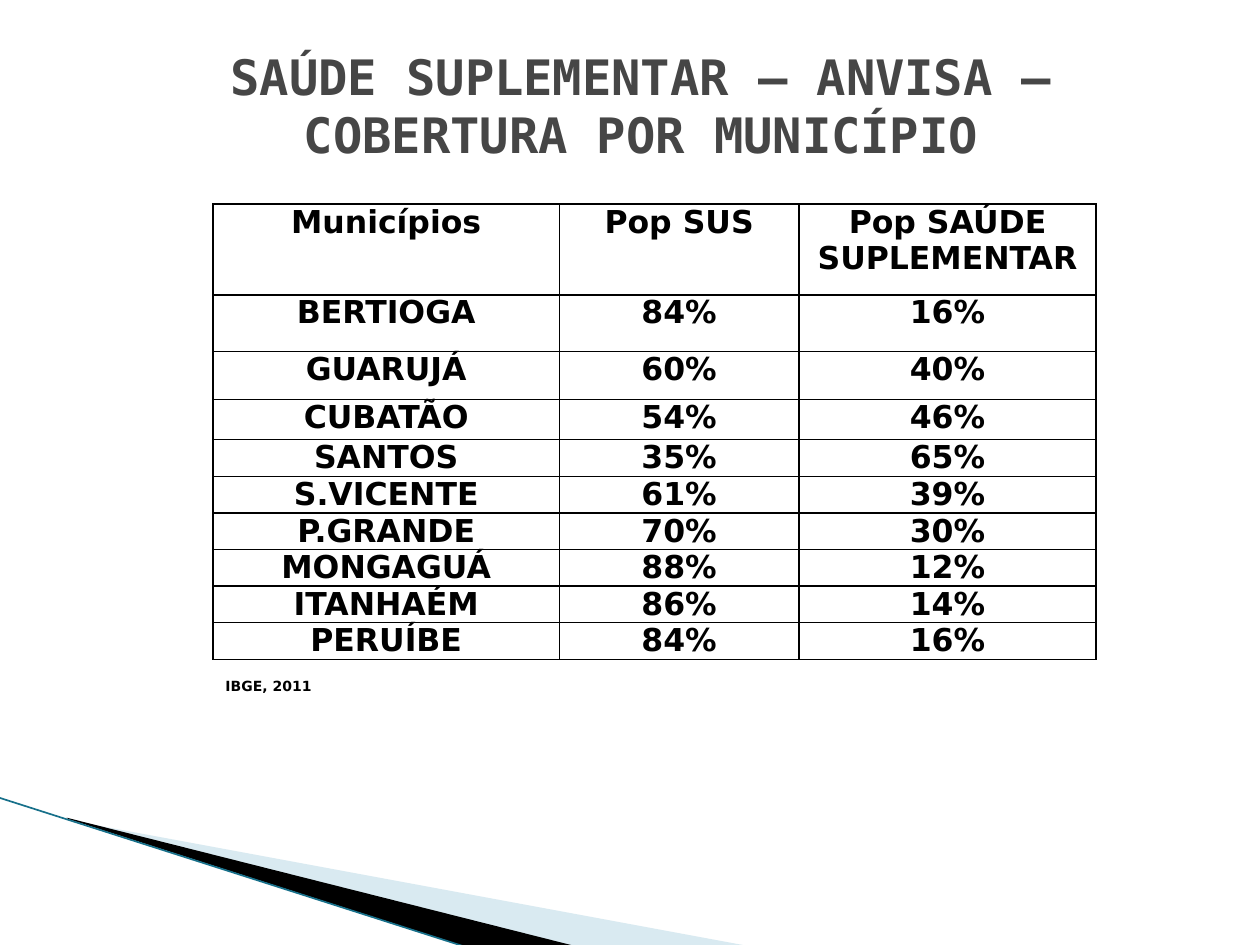
from lxml import etree
from pptx import Presentation
from pptx.dml.color import RGBColor
from pptx.enum.shapes import MSO_CONNECTOR as CONN
from pptx.enum.text import MSO_ANCHOR as ANCHOR, MSO_AUTO_SIZE as AUTO, PP_ALIGN as ALIGN
from pptx.oxml import parse_xml
from pptx.oxml.ns import nsdecls, qn
from pptx.util import Inches, Pt

SANS, MONO = "DejaVu Sans", "DejaVu Sans Mono"


def rgb(code):
    return RGBColor.from_string(code)


class Deck:
    ink, title_ink = "000000", "464646"

    def __init__(self, width, height):
        self.prs = Presentation()
        self.prs.slide_width, self.prs.slide_height = Inches(width), Inches(height)
        self.s = self.prs.slides.add_slide(self.prs.slide_layouts[6])

    def style(self, p, size, font=SANS, color=ink, align=ALIGN.LEFT):
        p.alignment = align
        for r in p.runs:
            f = r.font
            f.name, f.size, f.bold = font, Pt(size), True
            f.color.rgb = rgb(color)

    def wedge(self, points, color, alpha=None):
        pts = [(Inches(x), Inches(y)) for x, y in points]
        fb = self.s.shapes.build_freeform(*pts[0])
        fb.add_line_segments(pts[1:], close=True)
        sp = fb.convert_to_shape()
        sp.shadow.inherit = False
        sp.line.fill.background()
        sp.fill.solid()
        sp.fill.fore_color.rgb = rgb(color)
        if alpha is not None:
            clr = sp.fill._xPr.find(".//" + qn("a:srgbClr"))
            etree.SubElement(clr, qn("a:alpha"), val=str(alpha * 1000))

    def line(self, start, end, color, width):
        ends = [Inches(v) for v in (*start, *end)]
        cn = self.s.shapes.add_connector(CONN.STRAIGHT, *ends)
        cn.line.color.rgb = rgb(color)
        cn.line.width = Pt(width)
        etree.SubElement(cn._element.spPr, qn("a:effectLst"))

    def text(self, text, box, size, anchor=ANCHOR.MIDDLE, wrap=True, top=0.05, **look):
        tf = self.s.shapes.add_textbox(*[Inches(v) for v in box]).text_frame
        tf.word_wrap = wrap
        tf.auto_size = AUTO.NONE if wrap else AUTO.SHAPE_TO_FIT_TEXT
        tf.vertical_anchor = anchor
        tf.margin_top = Inches(top)
        tf.text = text
        self.style(tf.paragraphs[0], size, **look)

    def cell(self, cell, text, size):
        cell.text = text
        cell.margin_left = cell.margin_right = Inches(0.07)
        cell.margin_top = cell.margin_bottom = 0
        self.style(cell.text_frame.paragraphs[0], size, align=ALIGN.CENTER)
        tc_pr = cell._tc.get_or_add_tcPr()
        for side in ("lnL", "lnR", "lnT", "lnB"):
            tc_pr.append(parse_xml(
                f'<a:{side} {nsdecls("a")} w="12700"><a:solidFill>'
                f'<a:srgbClr val="{self.ink}"/></a:solidFill></a:{side}>'))
        cell.fill.background()

    def table(self, data, left, top, widths, heights, size):
        frame = self.s.shapes.add_table(
            len(data), len(widths), Inches(left), Inches(top),
            Inches(sum(widths)), Inches(sum(heights)))
        tbl = frame.table
        tbl.first_row = tbl.horz_banding = False
        for col, width in zip(tbl.columns, widths):
            col.width = Inches(width)
        for row, height, values in zip(tbl.rows, heights, data):
            row.height = Inches(height)
            for cell, value in zip(row.cells, values):
                self.cell(cell, value, size)


def main():
    deck = Deck(10, 7.5)

    # Corner decoration
    deck.wedge([(0.55, 6.51), (5.95, 7.51), (4.56, 7.51), (0.55, 6.5)], "A0CBDC", 40)
    deck.wedge([(0.53, 6.49), (4.57, 7.51), (3.72, 7.52), (0.54, 6.5)], "000000")
    deck.line((-0.01, 6.33), (3.71, 7.52), "17708A", 0.95)

    # Title
    deck.text("SAÚDE SUPLEMENTAR – ANVISA – COBERTURA POR MUNICÍPIO",
              (0.59, 0.29, 9, 1.56), 27.9, anchor=ANCHOR.TOP, top=0.08,
              font=MONO, color=deck.title_ink, align=ALIGN.CENTER)

    # Coverage table: the two shares of each town add up to 100%
    sus_share = {"BERTIOGA": 84, "GUARUJÁ": 60, "CUBATÃO": 54, "SANTOS": 35,
                 "S.VICENTE": 61, "P.GRANDE": 70, "MONGAGUÁ": 88,
                 "ITANHAÉM": 86, "PERUÍBE": 84}
    data = [("Municípios", "Pop SUS", "Pop SAÚDE SUPLEMENTAR")]
    data += [(town, f"{sus}%", f"{100 - sus}%") for town, sus in sus_share.items()]
    deck.table(data, 1.69, 1.62, [2.75, 1.9, 2.36],
               [0.72, 0.45, 0.38, 0.32] + [0.24] * 6, 18)

    # Source
    deck.text("IBGE, 2011", (1.69, 5.32, 0.92, 0.24), 8, wrap=False)

    deck.prs.save("out.pptx")


if __name__ == "__main__":
    main()
